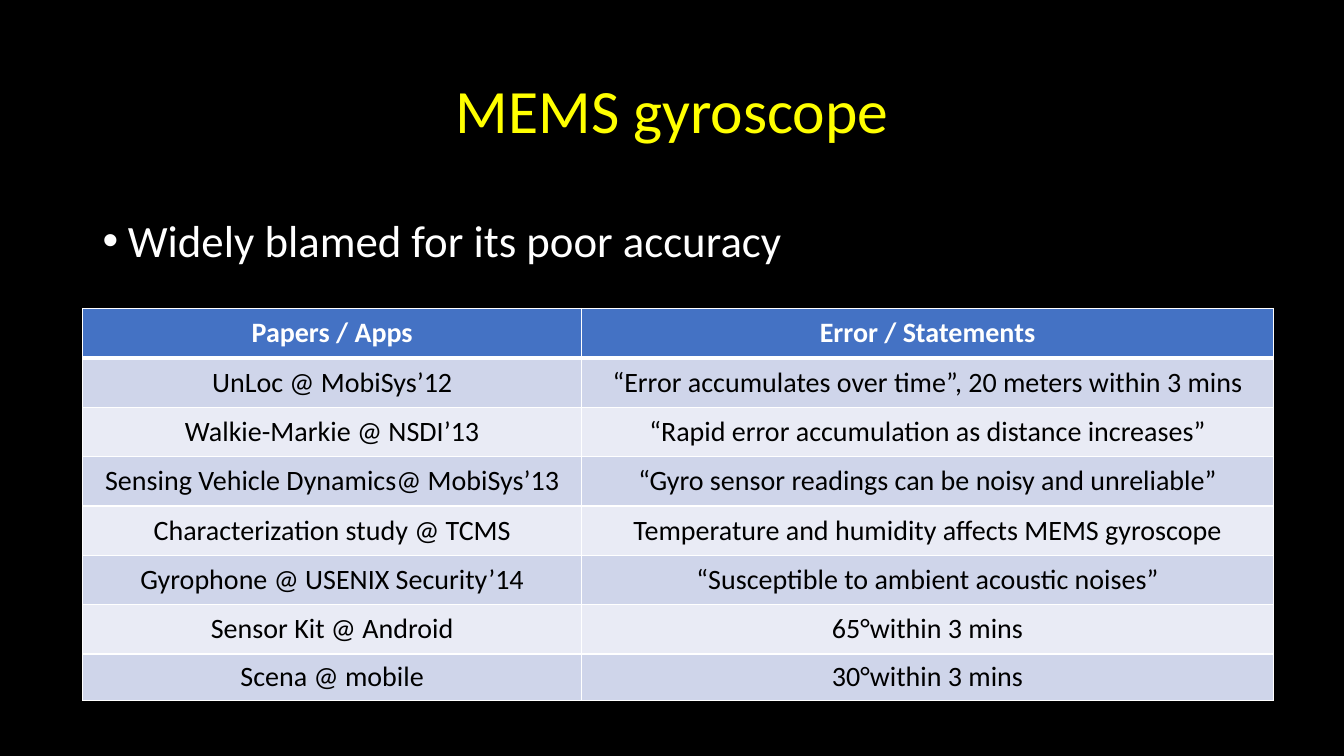
"""Build the MEMS gyroscope accuracy slide."""
from lxml.etree import SubElement
from pptx import Presentation
from pptx.dml.color import RGBColor
from pptx.enum.text import MSO_ANCHOR, PP_ALIGN
from pptx.oxml.ns import qn
from pptx.util import Inches, Pt

BLACK = RGBColor(0x00, 0x00, 0x00)
WHITE = RGBColor(0xFF, 0xFF, 0xFF)
YELLOW = RGBColor(0xFF, 0xFF, 0x00)
BLUE = RGBColor(0x44, 0x72, 0xC4)
BAND_DARK = RGBColor(0xCF, 0xD5, 0xEA)
BAND_LIGHT = RGBColor(0xE9, 0xEB, 0xF5)

ROWS = [
    ("Papers / Apps", "Error / Statements"),
    ("UnLoc @ MobiSys’12", "“Error accumulates over time”, 20 meters within 3 mins"),
    ("Walkie-Markie @ NSDI’13", "“Rapid error accumulation as distance increases”"),
    ("Sensing Vehicle Dynamics@ MobiSys’13", "“Gyro sensor readings can be noisy and unreliable”"),
    ("Characterization study @ TCMS", "Temperature and humidity affects MEMS gyroscope"),
    ("Gyrophone @ USENIX Security’14", "“Susceptible to ambient acoustic noises”"),
    ("Sensor Kit @ Android", "65°within 3 mins"),
    ("Scena @ mobile", "30°within 3 mins"),
]


def write(tf, text, size, color, bold=False, align=PP_ALIGN.CENTER, spacing=None):
    p = tf.paragraphs[0]
    p.alignment = align
    p.line_spacing = spacing
    r = p.add_run()
    r.text = text
    r.font.name = "Calibri"
    r.font.size = Pt(size)
    r.font.bold = bold
    r.font.color.rgb = color
    return p


def add_border(cell, side, width):
    ln = SubElement(cell._tc.get_or_add_tcPr(), qn(f"a:{side}"), w=str(Pt(width)))
    fill = SubElement(ln, qn("a:solidFill"))
    SubElement(fill, qn("a:srgbClr"), val=str(WHITE))


prs = Presentation()
prs.slide_width = Inches(13.33)
prs.slide_height = Inches(7.5)
s = prs.slides.add_slide(prs.slide_layouts[6])
s.background.fill.solid()
s.background.fill.fore_color.rgb = BLACK

title = s.shapes.add_textbox(Inches(0.92), Inches(0.4), Inches(11.5), Inches(1.45))
tf = title.text_frame
tf.word_wrap = True
tf.vertical_anchor = MSO_ANCHOR.MIDDLE
write(tf, "MEMS gyroscope", 44, YELLOW, spacing=0.9)

body = s.shapes.add_textbox(Inches(0.92), Inches(2.12), Inches(10.26), Inches(0.76))
tf = body.text_frame
tf.word_wrap = True
p = write(tf, "Widely blamed for its poor accuracy", 32, WHITE, align=PP_ALIGN.LEFT, spacing=0.9)
pPr = p._p.get_or_add_pPr()
pPr.set("marL", str(Inches(0.25)))
pPr.set("indent", str(Inches(-0.25)))
SubElement(pPr, qn("a:buFont"), typeface="Arial")
SubElement(pPr, qn("a:buChar"), char="•")

frame = s.shapes.add_table(len(ROWS), 2, Inches(0.82), Inches(3.06), Inches(11.81), Inches(3.89))
table = frame.table
table.columns[0].width = Inches(4.95)
table.columns[1].width = Inches(6.86)
for i, row in enumerate(ROWS):
    header = i == 0
    table.rows[i].height = Inches(0.46 if i == len(ROWS) - 1 else 0.49)
    for j, text in enumerate(row):
        cell = table.cell(i, j)
        cell.vertical_anchor = MSO_ANCHOR.MIDDLE
        write(cell.text_frame, text, 20, WHITE if header else BLACK, bold=header)
        add_border(cell, "lnL", 1)
        add_border(cell, "lnR", 1)
        add_border(cell, "lnT", 3 if i == 1 else 1)
        add_border(cell, "lnB", 3 if header else 1)
        cell.fill.solid()
        cell.fill.fore_color.rgb = BLUE if header else BAND_DARK if i % 2 else BAND_LIGHT

prs.save("out.pptx")
